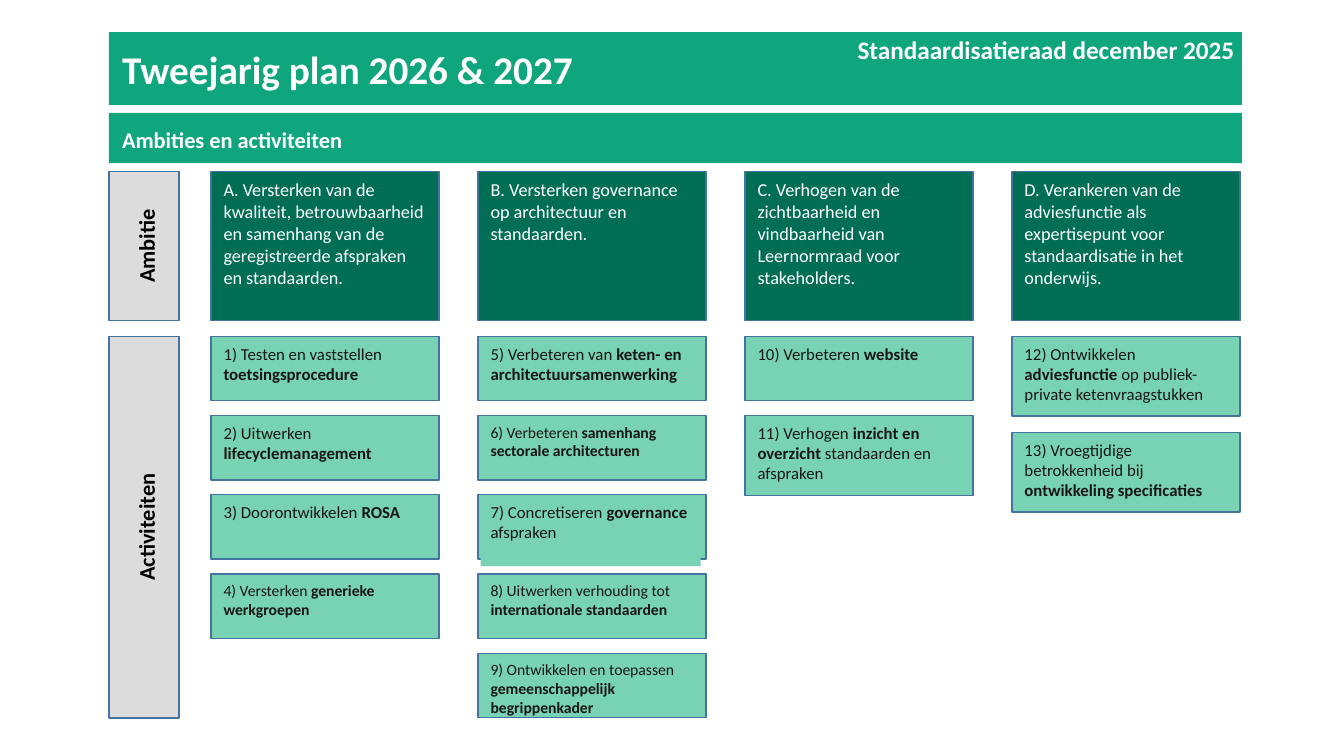
from pptx import Presentation
from pptx.dml.color import RGBColor
from pptx.enum.shapes import MSO_SHAPE as SHAPE
from pptx.enum.text import MSO_ANCHOR as ANCHOR, PP_ALIGN as ALIGN
from pptx.util import Pt

GREEN, DARK, MINT, GREY = "0FA67E", "006E54", "78D2B4", "DCDCDC"
EDGE, INK, WHITE, BLACK = "43739E", "181717", "FFFFFF", "000000"

LEFT, WIDTH = 77.8, 809.3
AMBITION_TOP, AMBITION_HEIGHT = 122.4, 106.6
ACTIVITY_TOP, ACTIVITY_HEIGHT = 240.2, 272.7
COLUMN_LEFT, COLUMN_PITCH, COLUMN_WIDTH = 150.7, 190.7, 163
LOW, HIGH = 46, 57

COLUMNS = [
    ("A. Versterken van de kwaliteit, betrouwbaarheid en samenhang van de "
     "geregistreerde afspraken en standaarden.", 56.6, [
         (LOW, 12, ["1) Testen en vaststellen ", "toetsingsprocedure"]),
         (LOW, 12, ["2) Uitwerken ", "lifecyclemanagement"]),
         (LOW, 12, ["3) Doorontwikkelen ", "ROSA"]),
         (LOW, 11.2, ["4) Versterken ", "generieke werkgroepen"]),
     ]),
    ("B. Versterken governance op architectuur en standaarden.", 56.6, [
        (LOW, 12, ["5) Verbeteren van ", "keten- en architectuursamenwerking"]),
        (LOW, 11.2, ["6) Verbeteren ", "samenhang sectorale architecturen"]),
        (LOW, 12, ["7) Concretiseren ", "governance ", "afspraken"]),
        (LOW, 11.2, ["8) Uitwerken verhouding tot ", "internationale standaarden"]),
        (LOW, 11.2, ["9) Ontwikkelen en toepassen ",
                     "gemeenschappelijk begrippenkader"]),
    ]),
    ("C. Verhogen van de zichtbaarheid en vindbaarheid van Leernormraad voor "
     "stakeholders.", 56.6, [
         (LOW, 12, ["10) Verbeteren ", "website"]),
         (HIGH, 12, ["11) Verhogen ", "inzicht en overzicht",
                     " standaarden en afspraken"]),
     ]),
    ("D. Verankeren van de adviesfunctie als expertisepunt voor "
     "standaardisatie in het onderwijs.", 68.6, [
         (HIGH, 12, ["12) Ontwikkelen ", "adviesfunctie",
                     " op publiek-private ketenvraagstukken"]),
         (HIGH, 12, ["13) Vroegtijdige betrokkenheid bij ",
                     "ontwikkeling specificaties"]),
     ]),
]


def color(value):
    """Turn a hex string into a colour."""
    return RGBColor.from_string(value)


def add_block(slide, box, fill, edge=None):
    """Draw a flat rectangle, with a thin edge if one is given."""
    block = slide.shapes.add_shape(SHAPE.RECTANGLE, *map(Pt, box))
    block.shadow.inherit = False
    block.fill.solid()
    block.fill.fore_color.rgb = color(fill)
    if edge:
        block.line.color.rgb = color(edge)
        block.line.width = Pt(1)
    else:
        block.line.fill.background()
    return block


def write(holder, parts, size, ink, bold=None, align=ALIGN.LEFT,
          insets=(7.2, 3.6, 7.2, 3.6), anchor=ANCHOR.TOP):
    """Write one paragraph; without a bold setting, every second part is bold."""
    frame = holder.text_frame
    frame.word_wrap = True
    frame.vertical_anchor = anchor
    (frame.margin_left, frame.margin_top,
     frame.margin_right, frame.margin_bottom) = map(Pt, insets)
    paragraph = frame.paragraphs[0]
    paragraph.alignment = align
    paragraph.font.name = "Calibri"
    paragraph.font.size = Pt(size)
    paragraph.font.color.rgb = color(ink)
    paragraph.font.bold = bold
    for index, part in enumerate(parts):
        run = paragraph.add_run()
        run.text = part
        if bold is None:
            run.font.bold = index % 2 == 1
    return frame


def add_banner(slide, box, heading, size):
    """Draw a full-width green bar with its heading."""
    write(add_block(slide, box, GREEN), [heading], size, WHITE, True,
          insets=(9.4,) * 4)


def add_meeting(slide, box, meeting):
    """Place the meeting name at the right end of the title bar."""
    write(slide.shapes.add_textbox(*map(Pt, box)), [meeting], 18, WHITE, True,
          ALIGN.RIGHT)


def add_row_label(slide, box, label):
    """Draw a grey row label that reads upwards."""
    frame = write(add_block(slide, box, GREY, EDGE), [label], 16, BLACK, True,
                  ALIGN.CENTER, (3, 0, 0, 0), ANCHOR.MIDDLE)
    frame._txBody.bodyPr.set("vert", "vert270")


def add_card(slide, box, fill, parts, size, ink):
    """Draw an edged card with its text at the top left."""
    write(add_block(slide, box, fill, EDGE), parts, size, ink,
          insets=(9, 5, 9, 0))


def add_column(slide, left, ambition, pitch, activities):
    """Stack the activities of one ambition below it."""
    add_card(slide, (left, AMBITION_TOP, COLUMN_WIDTH, AMBITION_HEIGHT),
             DARK, [ambition], 13, WHITE)
    for row, (height, size, parts) in enumerate(activities):
        top = ACTIVITY_TOP + row * pitch
        add_card(slide, (left, top, COLUMN_WIDTH, height), MINT, parts, size, INK)
        if parts[0].startswith("7)"):
            add_block(slide, (left + 2, top + height - 2, COLUMN_WIDTH - 6, 7), MINT)


def main():
    """Build the two-year plan slide."""
    deck = Presentation()
    deck.slide_width, deck.slide_height = Pt(960), Pt(540)
    slide = deck.slides.add_slide(deck.slide_layouts[6])
    add_banner(slide, (LEFT, 23, WIDTH, 52), "Tweejarig plan 2026 & 2027", 28)
    add_banner(slide, (LEFT, 80.6, WIDTH, 36), "Ambities en activiteiten", 16)
    add_meeting(slide, (583, 21, 306, 29), "Standaardisatieraad december 2025")
    add_row_label(slide, (LEFT, AMBITION_TOP, 50, AMBITION_HEIGHT), "Ambitie")
    add_row_label(slide, (LEFT, ACTIVITY_TOP, 50, ACTIVITY_HEIGHT), "Activiteiten")
    for index, column in enumerate(COLUMNS):
        add_column(slide, COLUMN_LEFT + index * COLUMN_PITCH, *column)
    deck.save("out.pptx")


if __name__ == "__main__":
    main()
